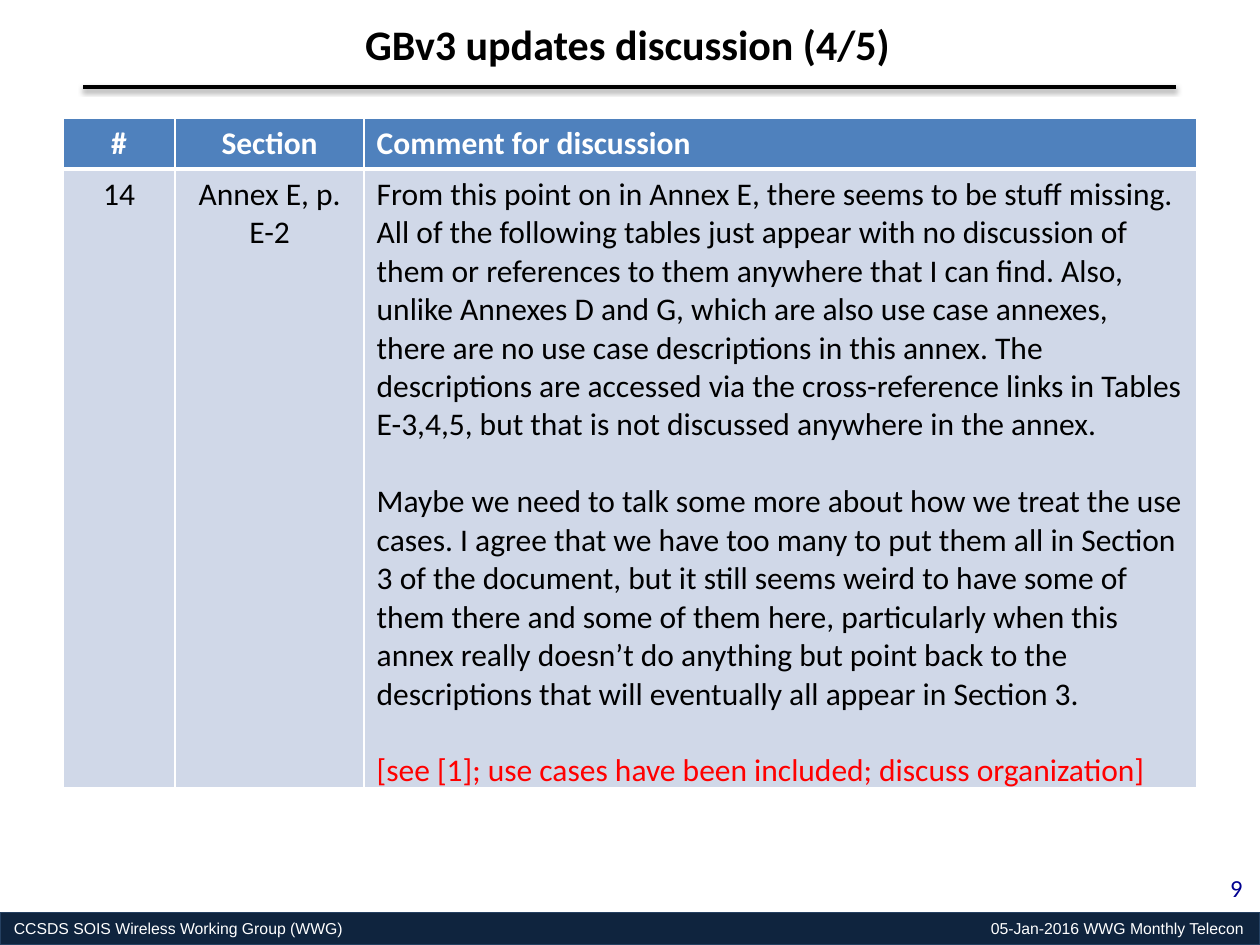
from lxml import etree
from pptx import Presentation
from pptx.dml.color import RGBColor
from pptx.enum.shapes import MSO_CONNECTOR, MSO_SHAPE
from pptx.enum.text import MSO_ANCHOR, PP_ALIGN
from pptx.oxml import parse_xml
from pptx.oxml.ns import nsdecls, qn
from pptx.util import Inches, Pt

LEFT, CENTER, RIGHT = PP_ALIGN.LEFT, PP_ALIGN.CENTER, PP_ALIGN.RIGHT
BLACK = RGBColor(0x00, 0x00, 0x00)
WHITE = RGBColor(0xFF, 0xFF, 0xFF)
RED = RGBColor(0xFF, 0x00, 0x00)
NAVY = RGBColor(0x0F, 0x24, 0x3E)
NAVY_EDGE = RGBColor(0x25, 0x40, 0x61)
NUMBER_BLUE = RGBColor(0x00, 0x00, 0x90)
HEADER_BLUE = RGBColor(0x4F, 0x81, 0xBD)
BODY_BLUE = RGBColor(0xD0, 0xD8, 0xE8)

COMMENT = [
    ("From this point on in Annex E, there seems to be stuff missing. All of the "
     "following tables just appear with no discussion of them or references to them "
     "anywhere that I can find. Also, unlike Annexes D and G, which are also use case "
     "annexes, there are no use case descriptions in this annex. The descriptions are "
     "accessed via the cross-reference links in Tables E-3,4,5, but that is not "
     "discussed anywhere in the annex.", BLACK),
    ("Maybe we need to talk some more about how we treat the use cases. I agree that "
     "we have too many to put them all in Section 3 of the document, but it still "
     "seems weird to have some of them there and some of them here, particularly when "
     "this annex really doesn’t do anything but point back to the descriptions that "
     "will eventually all appear in Section 3.", BLACK),
    ("[see [1]; use cases have been included; discuss organization]", RED),
]
HEADER = [[("#", WHITE)], [("Section", WHITE)], [("Comment for discussion", WHITE)]]
BODY = [[("14", BLACK)], [("Annex E, p. E-2", BLACK)], COMMENT]


def add_text(para, text, size, color, bold=False, font="Calibri", align=LEFT):
    para.alignment = align
    span = para.add_run()
    span.text = text
    span.font.name = font
    span.font.size = Pt(size)
    span.font.bold = bold
    span.font.color.rgb = color


def add_borders(cell, widths):
    """Draw white left, right, top and bottom borders, widths in points."""
    props = cell._tc.get_or_add_tcPr()
    for index, (side, width) in enumerate(zip("LRTB", widths)):
        props.insert(index, parse_xml(
            f'<a:ln{side} {nsdecls("a")} w="{Pt(width)}"><a:solidFill>'
            f'<a:srgbClr val="{WHITE}"/></a:solidFill></a:ln{side}>'))


deck = Presentation()
deck.slide_width, deck.slide_height = Inches(10), Inches(7.5)
page = deck.slides.add_slide(deck.slide_layouts[6])

# Footer bar: the date sits on a right tab stop
footer = page.shapes.add_shape(
    MSO_SHAPE.RECTANGLE, Inches(0), Inches(7.24), Inches(10), Inches(0.26))
footer.shadow.inherit = False
footer.fill.solid()
footer.fill.fore_color.rgb = NAVY
footer.line.color.rgb = NAVY_EDGE
footer.line.width = Pt(0.75)
frame = footer.text_frame
frame.margin_left = frame.margin_right = Inches(0.11)
frame.margin_top = frame.margin_bottom = Inches(0.06)
frame.vertical_anchor = MSO_ANCHOR.MIDDLE
para = frame.paragraphs[0]
add_text(para, "CCSDS SOIS Wireless Working Group (WWG)\t05-Jan-2016 WWG Monthly Telecon",
         9, WHITE, font="Arial")
tabs = etree.SubElement(para._p.get_or_add_pPr(), qn("a:tabLst"))
etree.SubElement(tabs, qn("a:tab"), pos=str(Inches(9.76)), algn="r")

# Page number
number = page.shapes.add_textbox(Inches(9.3), Inches(6.88), Inches(0.66), Inches(0.35))
number.text_frame.word_wrap = True
add_text(number.text_frame.paragraphs[0], "9", 14, NUMBER_BLUE, align=RIGHT)

# Comment table
table = page.shapes.add_table(
    2, 3, Inches(0.5), Inches(0.94), Inches(9), Inches(5.3)).table
for column, width in zip(table.columns, (0.89, 1.5, 6.61)):
    column.width = Inches(width)
rows = [(HEADER, 0.4, HEADER_BLUE, True, (1, 1, 1, 3)),
        (BODY, 4.9, BODY_BLUE, False, (1, 1, 3, 1))]
for row_index, (contents, height, fill, bold, widths) in enumerate(rows):
    table.rows[row_index].height = Inches(height)
    for column_index, paragraphs in enumerate(contents):
        cell = table.cell(row_index, column_index)
        cell.fill.solid()
        cell.fill.fore_color.rgb = fill
        add_borders(cell, widths)
        for index, (text, color) in enumerate(paragraphs):
            para = cell.text_frame.paragraphs[0] if index == 0 else cell.text_frame.add_paragraph()
            if index:
                para.space_before = Pt(22)
            add_text(para, text, 18, color, bold, align=LEFT if column_index == 2 else CENTER)

# Title and the rule under it
title = page.shapes.add_textbox(Inches(2.8), Inches(0.1), Inches(4.42), Inches(0.5))
title.text_frame.word_wrap = False
add_text(title.text_frame.paragraphs[0], "GBv3 updates discussion (4/5)", 24, BLACK, bold=True)

rule = page.shapes.add_connector(
    MSO_CONNECTOR.STRAIGHT, Inches(0.66), Inches(0.69), Inches(9.33), Inches(0.69))
rule.line.color.rgb = BLACK
rule.line.width = Pt(2)
rule._element.spPr.append(parse_xml(
    f'<a:effectLst {nsdecls("a")}><a:outerShdw blurRad="{Pt(3.1)}" dist="{Pt(1.6)}" '
    f'dir="5400000" rotWithShape="0"><a:srgbClr val="{BLACK}"><a:alpha val="38000"/>'
    '</a:srgbClr></a:outerShdw></a:effectLst>'))

deck.save("out.pptx")
